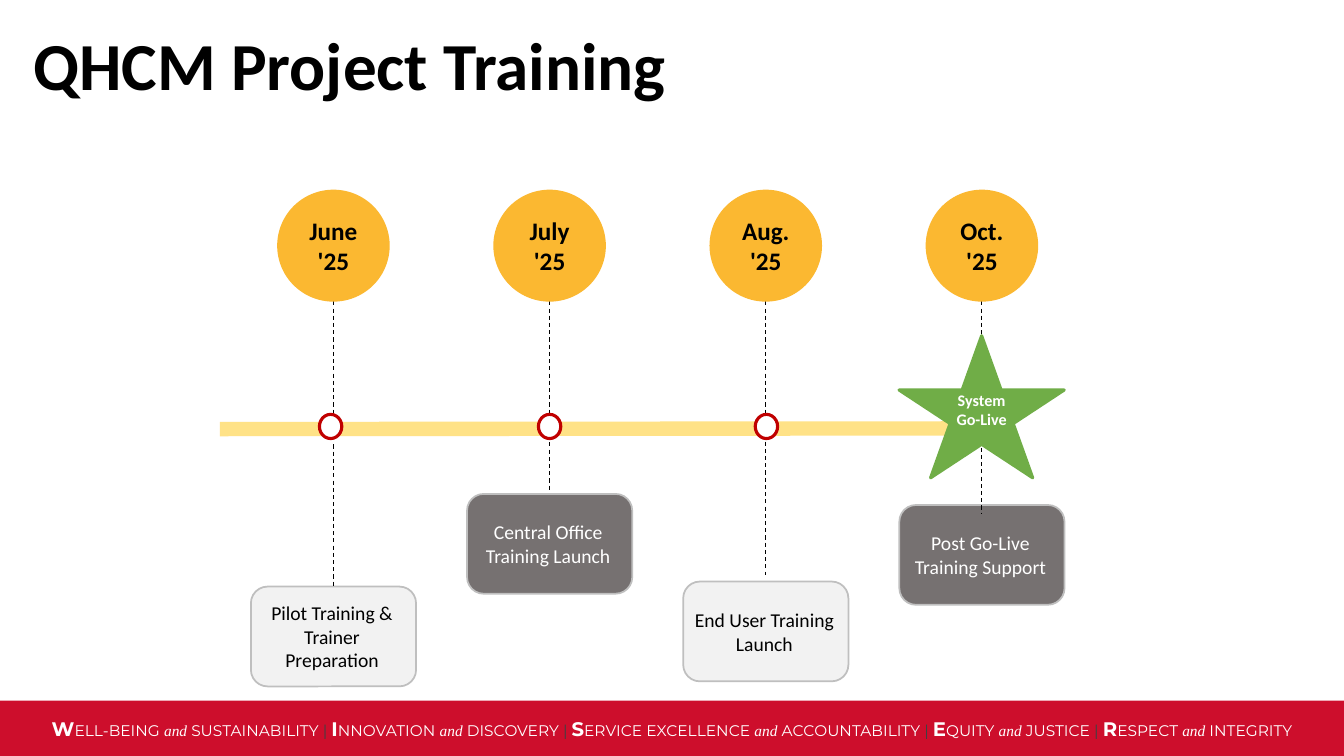
"""Build the QHCM project training timeline slide."""
from pptx import Presentation
from pptx.dml.color import RGBColor
from pptx.enum.dml import MSO_LINE
from pptx.enum.shapes import MSO_CONNECTOR, MSO_SHAPE
from pptx.enum.text import MSO_ANCHOR, PP_ALIGN
from pptx.oxml.ns import qn
from pptx.util import Pt
from lxml import etree

OVAL, CARD = MSO_SHAPE.OVAL, MSO_SHAPE.ROUNDED_RECTANGLE
RECT, STAR = MSO_SHAPE.RECTANGLE, MSO_SHAPE.STAR_5_POINT
STRAIGHT, DASH = MSO_CONNECTOR.STRAIGHT, MSO_LINE.DASH
TOP, MIDDLE, CENTER = MSO_ANCHOR.TOP, MSO_ANCHOR.MIDDLE, PP_ALIGN.CENTER

BLACK = RGBColor(0x00, 0x00, 0x00)
WHITE = RGBColor(0xFF, 0xFF, 0xFF)
RED = RGBColor(0xCD, 0x0E, 0x2C)
GOLD = RGBColor(0xFB, 0xB8, 0x31)
YELLOW = RGBColor(0xFF, 0xCE, 0x33)
GREEN = RGBColor(0x70, 0xAD, 0x47)
CRIMSON = RGBColor(0xC0, 0x00, 0x00)
PALE = RGBColor(0xF2, 0xF2, 0xF2)
GRAY = RGBColor(0x76, 0x71, 0x71)
EDGE = RGBColor(0xBF, 0xBF, 0xBF)
SLATE = RGBColor(0x40, 0x40, 0x42)

deck = Presentation()
deck.slide_width, deck.slide_height = Pt(960), Pt(540)
slide = deck.slides.add_slide(deck.slide_layouts[5])
shapes = slide.shapes


def add_form(kind, left, top, width, height, fill, edge=None, weight=0):
    form = shapes.add_shape(kind, Pt(left), Pt(top), Pt(width), Pt(height))
    form.shadow.inherit = False
    form.fill.solid()
    form.fill.fore_color.rgb = fill
    if edge is None:
        form.line.fill.background()
    else:
        form.line.color.rgb = edge
        form.line.width = Pt(weight)
    frame = form.text_frame
    frame.word_wrap = True
    frame.vertical_anchor = MIDDLE
    frame.margin_left = frame.margin_right = Pt(2)
    frame.margin_top = frame.margin_bottom = Pt(2)
    return form


def add_line(start, end, color, weight):
    line = shapes.add_connector(STRAIGHT, *map(Pt, start + end))
    line.line.color.rgb = color
    line.line.width = Pt(weight)
    etree.SubElement(line.element.spPr, qn("a:effectLst"))
    return line


title = shapes.title
title.left, title.top, title.width, title.height = map(Pt, (16.5, 19.5, 756, 115))
title.text_frame.text = "QHCM Project Training"
title.text_frame.word_wrap = True
title.text_frame.vertical_anchor = TOP
head = title.text_frame.paragraphs[0]
head.alignment = PP_ALIGN.LEFT
head.line_spacing = 0.9
head.font.name, head.font.size, head.font.bold = "Calibri", Pt(48), True
head.font.color.rgb = BLACK

values = [
    ("W", "ELL-BEING ", " SUSTAINABILITY "),
    ("I", "NNOVATION ", " DISCOVERY "),
    ("S", "ERVICE EXCELLENCE ", " ACCOUNTABILITY "),
    ("E", "QUITY ", " JUSTICE "),
    ("R", "ESPECT ", " INTEGRITY"),
]
footer = add_form(RECT, 0, 500.4, 960, 39.6, RED)
motto = footer.text_frame.paragraphs[0]
motto.alignment = CENTER
for first, rest, last in values:
    parts = [(first, 14, WHITE), (rest, 11, WHITE), ("and", 11, WHITE), (last, 11, WHITE)]
    if first != "R":
        parts.append(("| ", 11, SLATE))
    for text, size, color in parts:
        run = motto.add_run()
        run.text = text
        run.font.name = "Times New Roman" if text == "and" else "Montserrat"
        run.font.italic = text == "and"
        run.font.bold = text == first
        run.font.size = Pt(size)
        run.font.color.rgb = color

stages = [
    ("June '25", "Pilot Training & Trainer Preparation", 419, 317.5, 419, PALE, BLACK),
    ("July '25", "Central Office Training Launch", 352.8, 316, 350.6, GRAY, WHITE),
    ("Aug. '25", "End User Training Launch", 415.4, 315.4, 410.4, PALE, BLACK),
    ("Oct. '25", "Post Go-Live Training Support", 360.7, 314.6, 366.5, GRAY, WHITE),
]
mids = [238.2 + 154.4 * step for step in range(len(stages))]
for mid, (date, task, top, start, end, fill, ink) in zip(mids, stages):
    stem = add_line((mid, 143), (mid, 298.5), BLACK, 0.75)
    disc = add_form(OVAL, mid - 40.2, 135.5, 80.4, 80, GOLD)
    card = add_form(CARD, mid - 59, top, 118, 71.3, fill, EDGE, 1.25)
    card.text_frame.margin_left = 0
    drop = add_line((mid, start), (mid, end), BLACK, 0.75)
    stem.line.dash_style = drop.line.dash_style = DASH
    for form, text, size, color in ((disc, date, 18, BLACK), (card, task, 14, ink)):
        form.text_frame.text = text
        label = form.text_frame.paragraphs[0]
        label.alignment = CENTER
        label.font.name, label.font.size = "Calibri", Pt(size)
        label.font.bold = form is disc
        label.font.color.rgb = color

band = add_line((157, 306.5), (698.5, 306), YELLOW, 10.25)
tint = band.element.spPr.find(".//" + qn("a:srgbClr"))
etree.SubElement(tint, qn("a:alpha"), val="59000")

for mid, shift in zip(mids, (-2, 0, 0.5)):
    add_form(OVAL, mid + shift - 8, 296, 16, 17.3, WHITE, CRIMSON, 2.25)

add_form(STAR, 642.2, 239.8, 118, 101.5, GREEN, GREEN, 2.25)
note = shapes.add_textbox(Pt(666.7), Pt(275), Pt(69), Pt(42.5)).text_frame
note.word_wrap = True
note.text = "System\nGo-Live"
for line in note.paragraphs:
    line.alignment = CENTER
    line.font.name, line.font.size, line.font.bold = "Calibri", Pt(11.5), True
    line.font.color.rgb = WHITE

deck.save("out.pptx")
